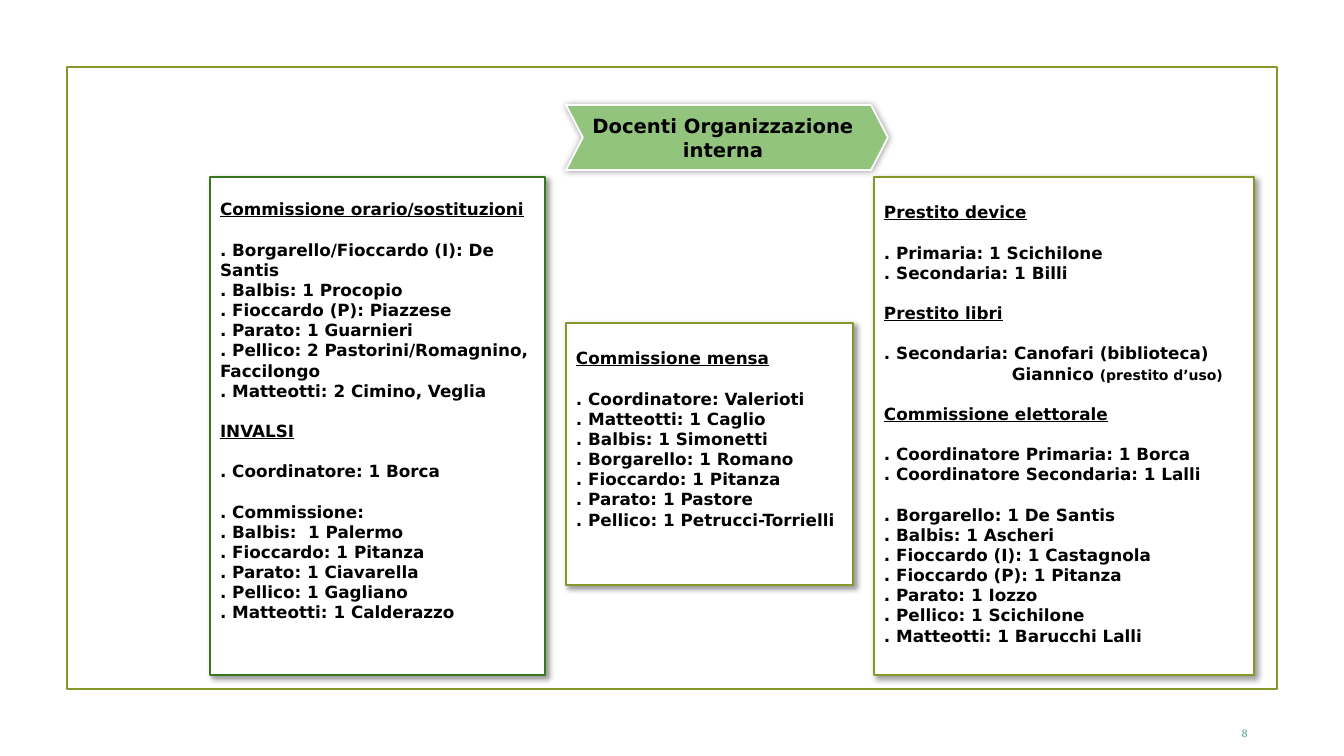
from dataclasses import dataclass

import lxml.etree
import pptx
import pptx.dml.color
import pptx.enum.shapes
import pptx.enum.text
import pptx.oxml.ns
import pptx.util

FONT = "DejaVu Sans"
BLACK, WHITE, OLIVE, GREEN = "000000", "FFFFFF", "83992A", "38761D"
LINE_PT = 14.4


@dataclass
class Line:
    text: str
    heading: bool = False
    indent: int = 0
    note: str = ""


@dataclass
class Panel:
    box: tuple[int, int, int, int]
    edge: str
    top_inset: int
    blocks: list[list[Line]]


def px(n: int) -> int:
    return pptx.util.Emu(round(n * 914400 / 100.8))


def rgb(value: str) -> pptx.dml.color.RGBColor:
    return pptx.dml.color.RGBColor.from_string(value)


def head(text: str) -> list[Line]:
    return [Line(text, heading=True)]


def items(*texts: str) -> list[Line]:
    return [Line(". " + text) for text in texts]


def place(sp, box: tuple[int, int, int, int]) -> None:
    sp.left, sp.top, sp.width, sp.height = map(px, box)


def outline(sp, color: str, width: float) -> None:
    sp.line.color.rgb = rgb(color)
    sp.line.width = pptx.util.Pt(width)


def paint(sp, fill: str) -> None:
    sp.fill.solid()
    sp.fill.fore_color.rgb = rgb(fill)


def cast_shadow(sp, blur: int, dist: int, angle: int) -> None:
    sp.shadow.inherit = False
    qn = pptx.oxml.ns.qn
    effects = sp._element.spPr.find(qn("a:effectLst"))
    shadow = lxml.etree.SubElement(
        effects, qn("a:outerShdw"), blurRad=str(pptx.util.Pt(blur)),
        dist=str(pptx.util.Pt(dist)), dir=str(angle * 60000), algn="bl", rotWithShape="0")
    color = lxml.etree.SubElement(shadow, qn("a:srgbClr"), val=BLACK)
    lxml.etree.SubElement(color, qn("a:alpha"), val="40000")


def setup_text(sp, insets: tuple[int, int, int, int], anchor: str) -> None:
    tf = sp.text_frame
    tf.word_wrap = True
    tf.auto_size = pptx.enum.text.MSO_AUTO_SIZE.NONE
    tf.vertical_anchor = pptx.enum.text.MSO_ANCHOR[anchor]
    tf.margin_left, tf.margin_top, tf.margin_right, tf.margin_bottom = map(px, insets)


def style(r, size: float, color: str = BLACK, bold: bool = True,
          underline: bool = False, name: str = FONT) -> None:
    r.font.name = name
    r.font.size = pptx.util.Pt(size)
    r.font.bold = bold
    r.font.underline = underline
    r.font.color.rgb = rgb(color)


def write_line(p, line: Line, gap: float) -> None:
    p.text = line.text
    pPr = p._p.get_or_add_pPr()
    pPr.set("marL", str(px(line.indent)))
    pPr.set("indent", "0")
    lxml.etree.SubElement(pPr, pptx.oxml.ns.qn("a:buNone"))
    p.alignment = pptx.enum.text.PP_ALIGN.LEFT
    p.space_before = pptx.util.Pt(gap)
    style(p.runs[0], 12, underline=line.heading)
    if line.note:
        r = p.add_run()
        r.text = line.note
        style(r, 10)


def fill_panel(sp, panel: Panel) -> None:
    place(sp, panel.box)
    paint(sp, WHITE)
    outline(sp, panel.edge, 2)
    cast_shadow(sp, 4, 3, 45)
    setup_text(sp, (10, panel.top_inset, 10, 5), "TOP")
    tf = sp.text_frame
    for b, block in enumerate(panel.blocks):
        for n, line in enumerate(block):
            p = tf.paragraphs[0] if b == n == 0 else tf.add_paragraph()
            write_line(p, line, LINE_PT if b > 0 and n == 0 else 0)


PANELS = [
    Panel((210, 177, 335, 498), GREEN, 22, [
        head("Commissione orario/sostituzioni"),
        items("Borgarello/Fioccardo (I): De Santis", "Balbis: 1 Procopio",
              "Fioccardo (P): Piazzese", "Parato: 1 Guarnieri",
              "Pellico: 2 Pastorini/Romagnino, Faccilongo",
              "Matteotti: 2 Cimino, Veglia"),
        head("INVALSI"),
        items("Coordinatore: 1 Borca"),
        items("Commissione:", "Balbis:  1 Palermo", "Fioccardo: 1 Pitanza",
              "Parato: 1 Ciavarella", "Pellico: 1 Gagliano",
              "Matteotti: 1 Calderazzo"),
    ]),
    Panel((874, 177, 380, 498), OLIVE, 25, [
        head("Prestito device"),
        items("Primaria: 1 Scichilone", "Secondaria: 1 Billi"),
        head("Prestito libri"),
        items("Secondaria: Canofari (biblioteca)")
        + [Line("Giannico ", indent=128, note="(prestito d’uso)")],
        head("Commissione elettorale"),
        items("Coordinatore Primaria: 1 Borca", "Coordinatore Secondaria: 1 Lalli"),
        items("Borgarello: 1 De Santis", "Balbis: 1 Ascheri",
              "Fioccardo (I): 1 Castagnola", "Fioccardo (P): 1 Pitanza",
              "Parato: 1 Iozzo", "Pellico: 1 Scichilone",
              "Matteotti: 1 Barucchi Lalli"),
    ]),
    Panel((566, 323, 287, 262), OLIVE, 25, [
        head("Commissione mensa"),
        items("Coordinatore: Valerioti", "Matteotti: 1 Caglio",
              "Balbis: 1 Simonetti", "Borgarello: 1 Romano",
              "Fioccardo: 1 Pitanza", "Parato: 1 Pastore",
              "Pellico: 1 Petrucci-Torrielli"),
    ]),
]


def main() -> None:
    prs = pptx.Presentation()
    prs.slide_width, prs.slide_height = px(1344), px(756)
    slide = prs.slides.add_slide(prs.slide_layouts.get_by_name("Comparison"))
    title, *bodies = slide.placeholders
    shapes = slide.shapes
    kinds = pptx.enum.shapes.MSO_SHAPE

    frame = shapes.add_shape(kinds.RECTANGLE, *map(px, (67, 67, 1210, 622)))
    frame.fill.background()
    outline(frame, OLIVE, 1.25)
    frame.shadow.inherit = False

    number = shapes.add_textbox(*map(px, (1242, 726, 47, 22)))
    setup_text(number, (0, 0, 0, 0), "TOP")
    number.text_frame.text = "8"
    style(number.text_frame.paragraphs[0].runs[0], 8, "3C9770", False,
          name="Times New Roman")

    chevron = shapes.add_shape(kinds.CHEVRON, *map(px, (566, 105, 322, 65)))
    chevron.adjustments[0] = 0.26
    paint(chevron, "93C47D")
    outline(chevron, WHITE, 1.25)
    cast_shadow(chevron, 5, 0, 0)

    place(title, (583, 105, 280, 65))
    setup_text(title, (0, 0, 0, 0), "MIDDLE")
    title.text_frame.text = "Docenti Organizzazione\ninterna"
    for p in title.text_frame.paragraphs:
        p.alignment = pptx.enum.text.PP_ALIGN.CENTER
        p.space_before = pptx.util.Pt(0)
        style(p.runs[0], 14)
    shapes._spTree.append(title._element)

    for sp, panel in zip(bodies, PANELS):
        fill_panel(sp, panel)
        shapes._spTree.append(sp._element)
    for sp in bodies[len(PANELS):]:
        shapes._spTree.remove(sp._element)

    prs.save("out.pptx")


if __name__ == "__main__":
    main()
